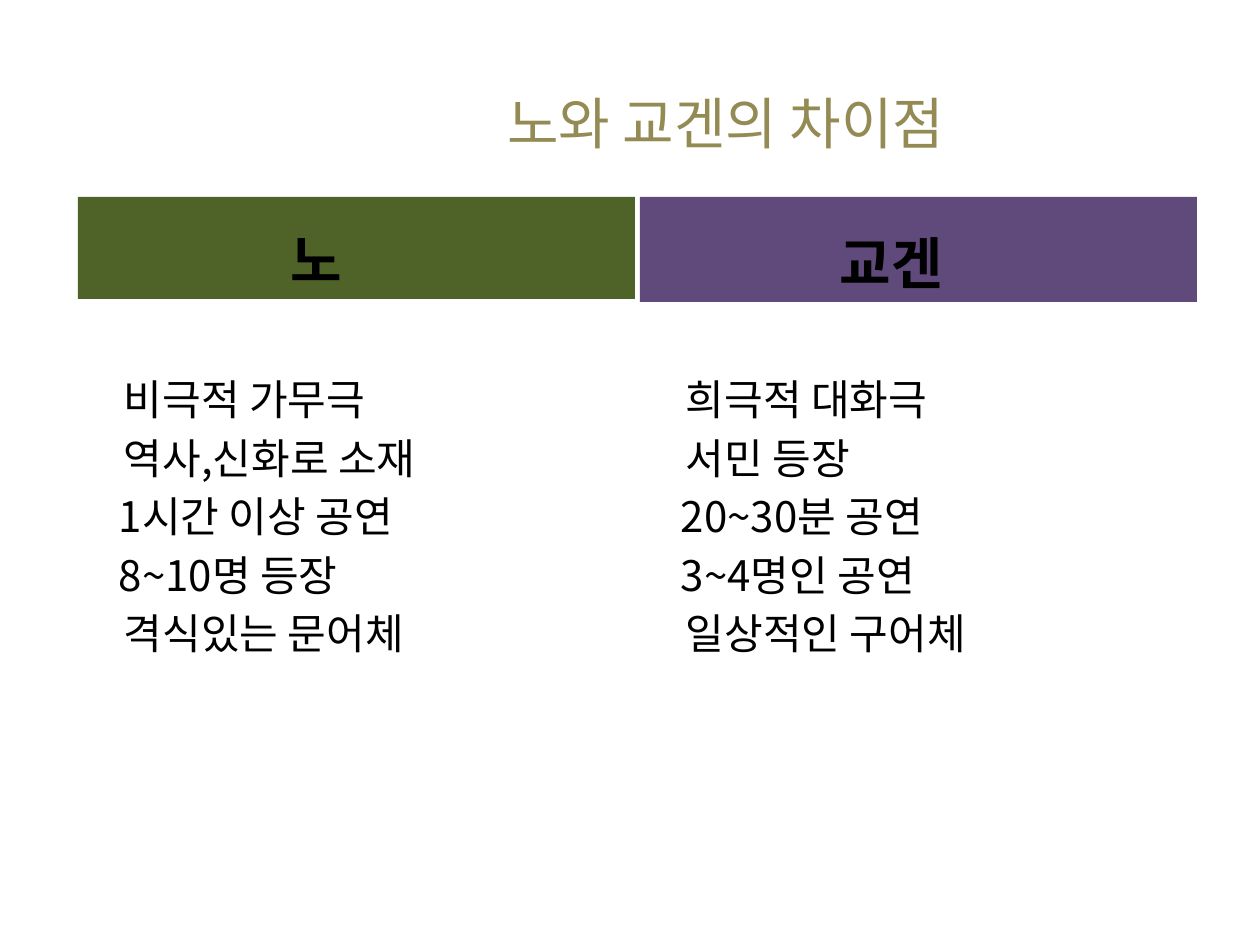
import pptx
import pptx.dml.color
import pptx.enum.shapes
import pptx.enum.text
import pptx.oxml.ns
import pptx.util
from lxml import etree

PX = 914400 // 126
FONT = "Noto Sans CJK KR"
BLACK = pptx.dml.color.RGBColor(0x00, 0x00, 0x00)
TAN = pptx.dml.color.RGBColor(0x94, 0x8A, 0x54)
GREEN = pptx.dml.color.RGBColor(0x4F, 0x62, 0x28)
PURPLE = pptx.dml.color.RGBColor(0x60, 0x4A, 0x7B)
ALIGN = pptx.enum.text.PP_ALIGN
ANCHOR = pptx.enum.text.MSO_ANCHOR


def prepare_frame(box, anchor, left=13, top=6):
    """Wrap the text, anchor it and set its insets in px."""
    frame = box.text_frame
    frame.word_wrap = True
    frame.vertical_anchor = anchor
    frame.margin_left, frame.margin_right = left * PX, 13 * PX
    frame.margin_top, frame.margin_bottom = top * PX, 6 * PX
    return frame


def add_span(para, text, size, color=BLACK, bold=False):
    span = para.add_run()
    span.text = text
    span.font.size = pptx.util.Pt(size)
    span.font.bold = bold
    span.font.color.rgb = color
    span.font.name = FONT
    east_asian = etree.SubElement(span.font._element, pptx.oxml.ns.qn("a:ea"))
    east_asian.set("typeface", FONT)


deck = pptx.Presentation()
deck.slide_width = 1260 * PX
deck.slide_height = 945 * PX
page = deck.slides.add_slide(deck.slide_layouts[6])

# The title is centred to the right of the page centre
title = page.shapes.add_textbox(63 * PX, 38 * PX, 1134 * PX, 157 * PX)
para = prepare_frame(title, ANCHOR.MIDDLE, left=205, top=17).paragraphs[0]
para.alignment = ALIGN.CENTER
add_span(para, "노와 교겐의 차이점", 32, TAN)

# Column left, header height, header inset, fill, heading, points
columns = [
    (78, 102, 213, GREEN, "노",
     ["비극적 가무극", "역사,신화로 소재", "1시간 이상 공연", "8~10명 등장", "격식있는 문어체"]),
    (640, 105, 200, PURPLE, "교겐",
     ["희극적 대화극", "서민 등장", "20~30분 공연", "3~4명인 공연", "일상적인 구어체"]),
]
for left, height, inset, fill, heading, points in columns:
    header = page.shapes.add_shape(
        pptx.enum.shapes.MSO_SHAPE.RECTANGLE,
        left * PX, 197 * PX, 557 * PX, height * PX)
    header.shadow.inherit = False
    header.fill.solid()
    header.fill.fore_color.rgb = fill
    header.line.fill.background()
    para = prepare_frame(header, ANCHOR.BOTTOM, left=inset).paragraphs[0]
    para.alignment = ALIGN.LEFT
    add_span(para, heading, 32, bold=True)

    body = page.shapes.add_textbox(left * PX, 305 * PX, 557 * PX, 543 * PX)
    frame = prepare_frame(body, ANCHOR.TOP, top=61)
    for index, point in enumerate(points):
        para = frame.paragraphs[0] if index == 0 else frame.add_paragraph()
        para.line_spacing = pptx.util.Pt(33.4)
        indent = 28 if point[0].isdigit() else 33
        para._p.get_or_add_pPr().set("marL", str(indent * PX))
        add_span(para, point, 24)

deck.save("out.pptx")
